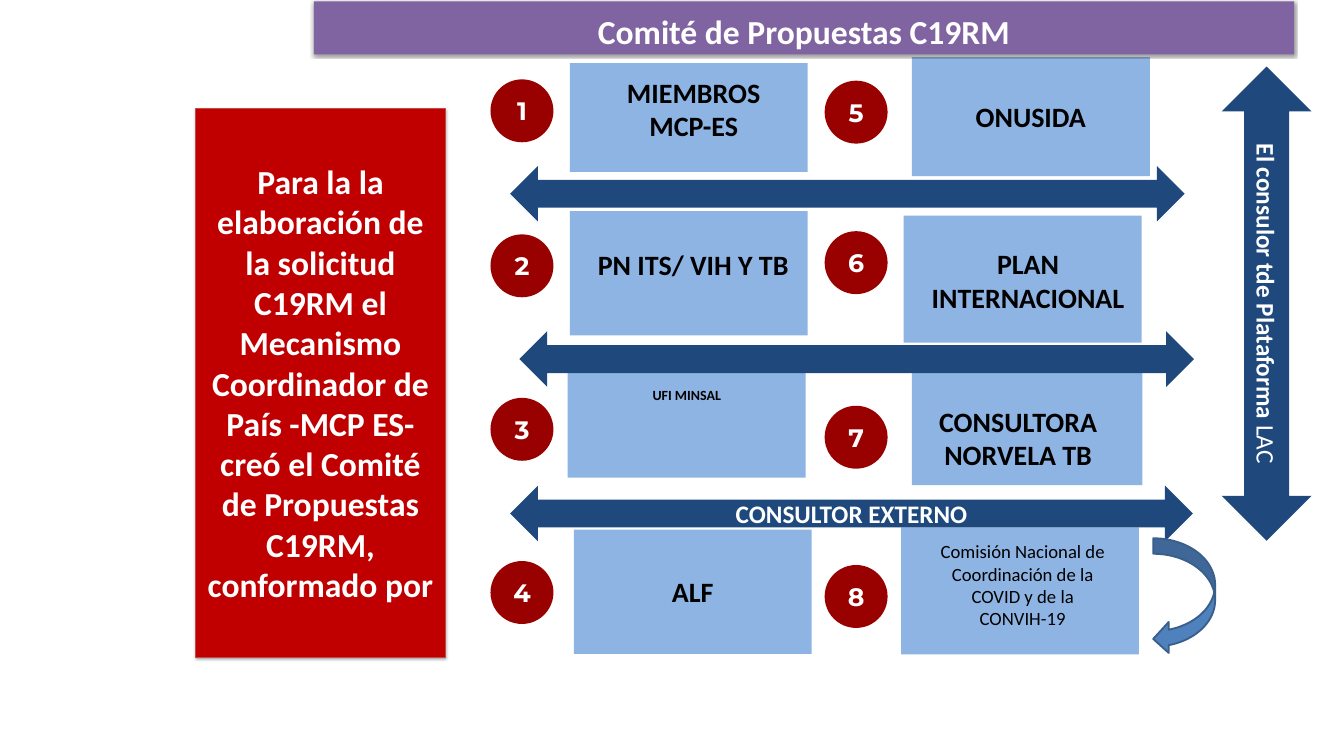
import pptx
import pptx.dml.color
import pptx.enum.shapes
import pptx.enum.text
import pptx.oxml
import pptx.oxml.ns
import pptx.util
from dataclasses import dataclass

Cm = pptx.util.Cm
Pt = pptx.util.Pt
SHAPE = pptx.enum.shapes.MSO_SHAPE
ANCHOR = pptx.enum.text.MSO_ANCHOR


@dataclass(frozen=True)
class Theme:
    font: str = "Calibri"
    badge_font: str = "Montserrat"
    card: str = "8EB4E3"
    badge: str = "990000"
    arrow: str = "1F497D"
    title: str = "8064A2"
    panel: str = "C00000"
    panel_line: str = "BF4C48"
    curve: str = "4F81BD"
    curve_line: str = "3A5F8C"
    dark: str = "000000"
    light: str = "FFFFFF"
    heading_size: int = 36
    card_size: int = 30
    arrow_size: int = 27
    note_size: int = 20
    small_size: int = 15


THEME = Theme()

# Left, top, width, height in cm
CARDS = [
    (21.54, 2.39, 8.99, 4.11),
    (21.54, 7.98, 8.99, 4.7),
    (21.46, 13.21, 8.99, 4.85),
    (21.69, 20.02, 8.99, 4.7),
    (34.47, 2.16, 8.99, 4.5),
    (34.16, 8.15, 8.99, 4.8),
    (34.47, 13.84, 8.71, 4.5),
    (34.06, 19.94, 8.99, 4.8),
]
CARD_TEXTS = {4: "ALF", 5: "ONUSIDA"}

# Text, box, type size, bold, anchor
CAPTIONS = [
    ("MIEMBROS MCP-ES", (22.23, 2.72, 7.98, 2.77), THEME.card_size, True, ANCHOR.TOP),
    ("PN ITS/ VIH Y TB", (22, 9.19, 8.41, 1.63), THEME.card_size, True, ANCHOR.MIDDLE),
    ("UFI MINSAL", (22.1, 14.48, 7.72, 0.89), THEME.small_size, True, ANCHOR.TOP),
    ("PLAN INTERNACIONAL", (34.62, 9.12, 8.48, 2.95), THEME.card_size, True, ANCHOR.MIDDLE),
    ("CONSULTORA NORVELA TB", (34.47, 15.16, 8.03, 4.11), THEME.card_size, True, ANCHOR.TOP),
    ("Comisión Nacional de Coordinación de la COVID y de la CONVIH-19",
     (35.2, 20.29, 6.91, 7.72), THEME.note_size, False, ANCHOR.TOP),
]

BADGE_COLUMNS = [
    (18.54, (3, 8.86, 15.04, 21.21)),
    (31.17, (3.05, 8.74, 15.34, 21.36)),
]
BADGE_SIZE = 2.38

ARROWS = [
    ((19.28, 18.36, 25.81, 2.11), "CONSULTOR EXTERNO"),
    ((19.63, 12.52, 25.5, 2.11), ""),
    ((19.28, 6.27, 25.5, 2.11), ""),
]

PANEL_TEXT = ("Para la la elaboración de la solicitud C19RM el Mecanismo "
              "Coordinador de País -MCP ES- creó el Comité de Propuestas C19RM, "
              "conformado por")


def rgb(value):
    return pptx.dml.color.RGBColor.from_string(value)


def write(sp, text, size, color, bold=True, font=THEME.font, anchor=ANCHOR.MIDDLE):
    """Set one centred, wrapped paragraph and return it."""
    tf = sp.text_frame
    tf.word_wrap = True
    tf.vertical_anchor = anchor
    p = tf.paragraphs[0]
    p.alignment = pptx.enum.text.PP_ALIGN.CENTER
    p.add_run().text = text
    p.font.name = font
    p.font.size = Pt(size)
    p.font.bold = bold
    p.font.color.rgb = rgb(color)
    return p


def add_block(s, kind, box, fill, line=None, line_width=0.75):
    sp = s.shapes.add_shape(kind, *map(Cm, box))
    sp.shadow.inherit = False
    sp.fill.solid()
    sp.fill.fore_color.rgb = rgb(fill)
    if line:
        sp.line.color.rgb = rgb(line)
        sp.line.width = Pt(line_width)
    else:
        sp.line.fill.background()
    return sp


def add_caption(s, text, box, size, bold, anchor):
    sp = s.shapes.add_textbox(*map(Cm, box))
    write(sp, text, size, THEME.dark, bold, anchor=anchor)


def add_badge(s, number, left, top):
    sp = add_block(s, SHAPE.OVAL, (left, top, BADGE_SIZE, BADGE_SIZE), THEME.badge)
    write(sp, str(number), THEME.arrow_size, THEME.light, font=THEME.badge_font)


def add_arrow(s, box, text=""):
    sp = add_block(s, SHAPE.LEFT_RIGHT_ARROW, box, THEME.arrow)
    if text:
        write(sp, text, THEME.arrow_size, THEME.light)
    return sp


def drop_shadow(sp):
    """Fill the shape's empty effect list with a soft shadow below it."""
    effects = sp._element.spPr.find(pptx.oxml.ns.qn("a:effectLst"))
    effects.append(pptx.oxml.parse_xml(
        f'<a:outerShdw {pptx.oxml.ns.nsdecls("a")} blurRad="{Pt(3.1)}" '
        f'dist="{Pt(1.6)}" dir="5400000" rotWithShape="0">'
        f'<a:srgbClr val="{THEME.dark}"><a:alpha val="38000"/></a:srgbClr>'
        '</a:outerShdw>'))


def add_headings(s):
    title = add_block(s, SHAPE.RECTANGLE, (11.86, 0.05, 37.06, 2.01), THEME.title)
    write(title, "Comité de Propuestas C19RM", THEME.heading_size, THEME.light,
          anchor=ANCHOR.BOTTOM)
    panel = add_block(s, SHAPE.RECTANGLE, (7.39, 4.09, 9.45, 20.75), THEME.panel,
                      THEME.panel_line)
    write(panel, PANEL_TEXT, THEME.heading_size, THEME.light)
    for sp in (title, panel):
        drop_shadow(sp)


def add_side_arrow(s):
    sp = add_arrow(s, (38.91, 9.78, 17.93, 3.4))
    sp.rotation = 90
    p = write(sp, "El consulor tde Plataforma ", THEME.arrow_size, THEME.light)
    r = p.add_run()
    r.text = "LAC"
    r.font.bold = False


def main():
    prs = pptx.Presentation()
    prs.slide_width, prs.slide_height = Cm(50.8), Cm(28.58)
    s = prs.slides.add_slide(prs.slide_layouts[6])

    for number, box in enumerate(CARDS, 1):
        card = add_block(s, SHAPE.RECTANGLE, box, THEME.card)
        if number in CARD_TEXTS:
            write(card, CARD_TEXTS[number], THEME.card_size, THEME.dark)
    for caption in CAPTIONS:
        add_caption(s, *caption)
    for column, (left, tops) in enumerate(BADGE_COLUMNS):
        for row, top in enumerate(tops, 1):
            add_badge(s, column * len(tops) + row, left, top)
    for box, text in ARROWS:
        add_arrow(s, box, text)
    add_headings(s)
    add_side_arrow(s)
    add_block(s, SHAPE.CURVED_LEFT_ARROW, (43.59, 20.35, 2.34, 4.39), THEME.curve,
              THEME.curve_line, 2)

    prs.save("out.pptx")


if __name__ == "__main__":
    main()
